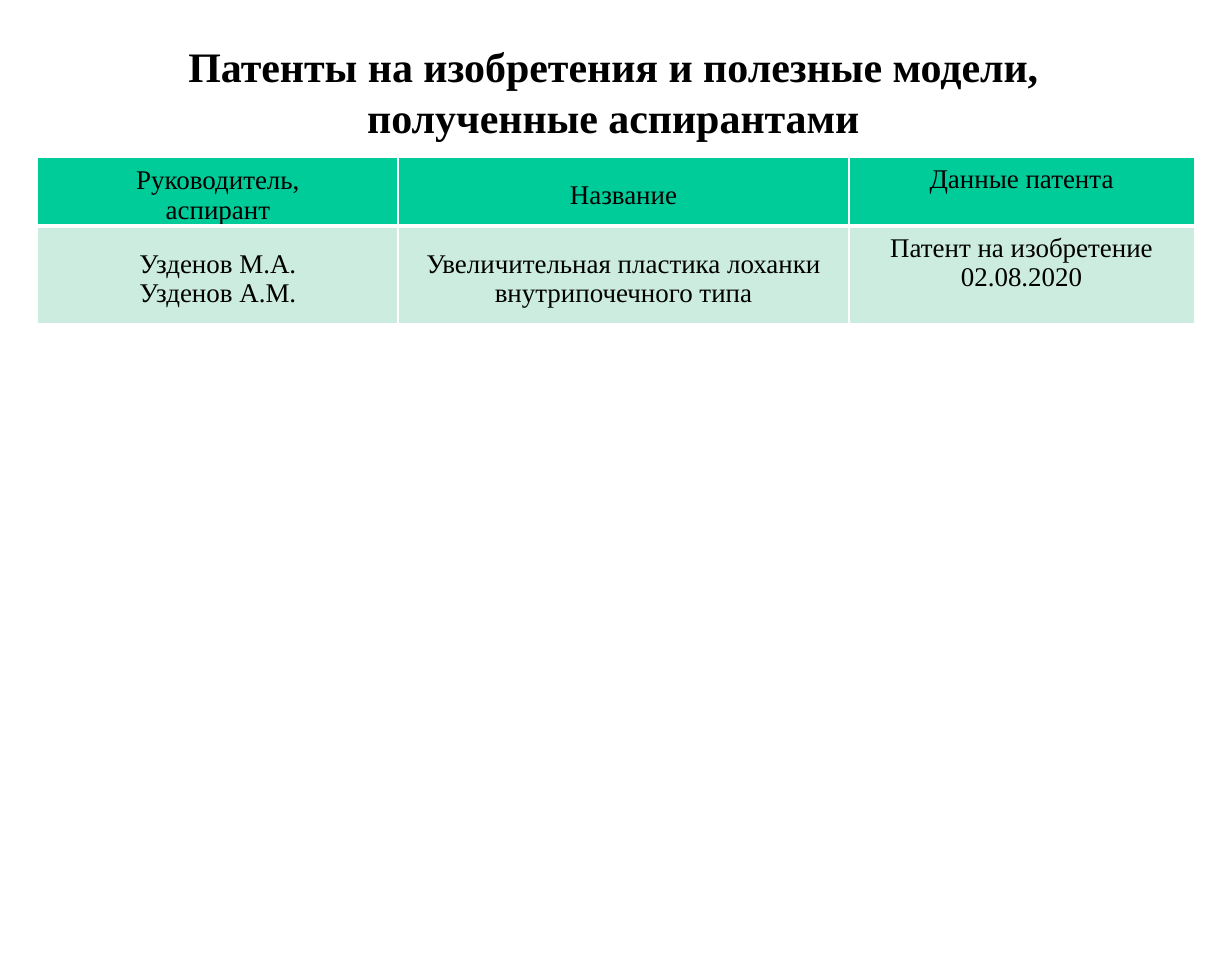
from lxml import etree
from pptx import Presentation
from pptx import util as u
from pptx.dml.color import RGBColor
from pptx.enum import text
from pptx.oxml import ns

FONT = "Times New Roman"
COLORS = {"text": "000000", "header": "00CC99", "body": "CBECDE", "border": "FFFFFF"}
COLUMN_WIDTHS = [3.34, 4.18, 3.2]
ROW_HEIGHTS = [0.64, 0.91]
PATENTS = [
    ["Руководитель,\nаспирант", "Название", "Данные патента"],
    ["Узденов М.А.\nУзденов А.М.",
     "Увеличительная пластика лоханки внутрипочечного типа",
     "Патент на изобретение\n02.08.2020"],
]


def rgb(name):
    return RGBColor.from_string(COLORS[name])


def format_text(frame, size, bold=False, spacing=None):
    for para in frame.paragraphs:
        para.alignment = text.PP_ALIGN.CENTER
        para.line_spacing = spacing
        for span in para.runs:
            span.font.name = FONT
            span.font.size = u.Pt(size)
            span.font.bold = bold
            span.font.color.rgb = rgb("text")


def add_title(page, wording):
    title = page.shapes.title
    title.left, title.top = u.Inches(0.81), u.Inches(0.35)
    title.width, title.height = u.Inches(9.75), u.Inches(0.98)
    frame = title.text_frame
    frame.text = wording
    frame.word_wrap = True
    frame.auto_size = text.MSO_AUTO_SIZE.NONE
    frame.vertical_anchor = text.MSO_ANCHOR.MIDDLE
    frame.margin_left = frame.margin_top = frame.margin_right = frame.margin_bottom = 0
    format_text(frame, 28, bold=True, spacing=1.01)


def set_borders(cell, widths):
    properties = cell._tc.get_or_add_tcPr()
    for side, width in widths.items():
        line = etree.SubElement(properties, ns.qn(f"a:ln{side}"), w=str(u.Pt(width)))
        fill = etree.SubElement(line, ns.qn("a:solidFill"))
        etree.SubElement(fill, ns.qn("a:srgbClr"), val=COLORS["border"])


def fill_cell(cell, wording, is_header, anchor):
    cell.text = wording
    cell.margin_left = cell.margin_right = cell.margin_bottom = 0
    cell.margin_top = u.Inches(0.06)
    cell.vertical_anchor = anchor
    set_borders(cell, {"L": 1, "R": 1, "T": 1 if is_header else 3, "B": 3})
    cell.fill.solid()
    cell.fill.fore_color.rgb = rgb("header" if is_header else "body")
    format_text(cell.text_frame, 18)


def add_patent_table(page):
    table = page.shapes.add_table(
        len(ROW_HEIGHTS), len(COLUMN_WIDTHS), u.Inches(0.35), u.Inches(1.46),
        u.Inches(sum(COLUMN_WIDTHS)), u.Inches(sum(ROW_HEIGHTS))).table
    for column, width in zip(table.columns, COLUMN_WIDTHS):
        column.width = u.Inches(width)
    for row, height in zip(table.rows, ROW_HEIGHTS):
        row.height = u.Inches(height)
    anchors = [text.MSO_ANCHOR.MIDDLE, text.MSO_ANCHOR.MIDDLE, text.MSO_ANCHOR.TOP]
    for row, wordings in enumerate(PATENTS):
        for column, wording in enumerate(wordings):
            fill_cell(table.cell(row, column), wording, row == 0, anchors[column])


def main():
    deck = Presentation()
    deck.slide_width, deck.slide_height = u.Inches(11.42), u.Inches(8.9)
    page = deck.slides.add_slide(deck.slide_layouts[5])
    add_title(page, "Патенты на изобретения и полезные модели, полученные аспирантами")
    add_patent_table(page)
    deck.save("out.pptx")


if __name__ == "__main__":
    main()
